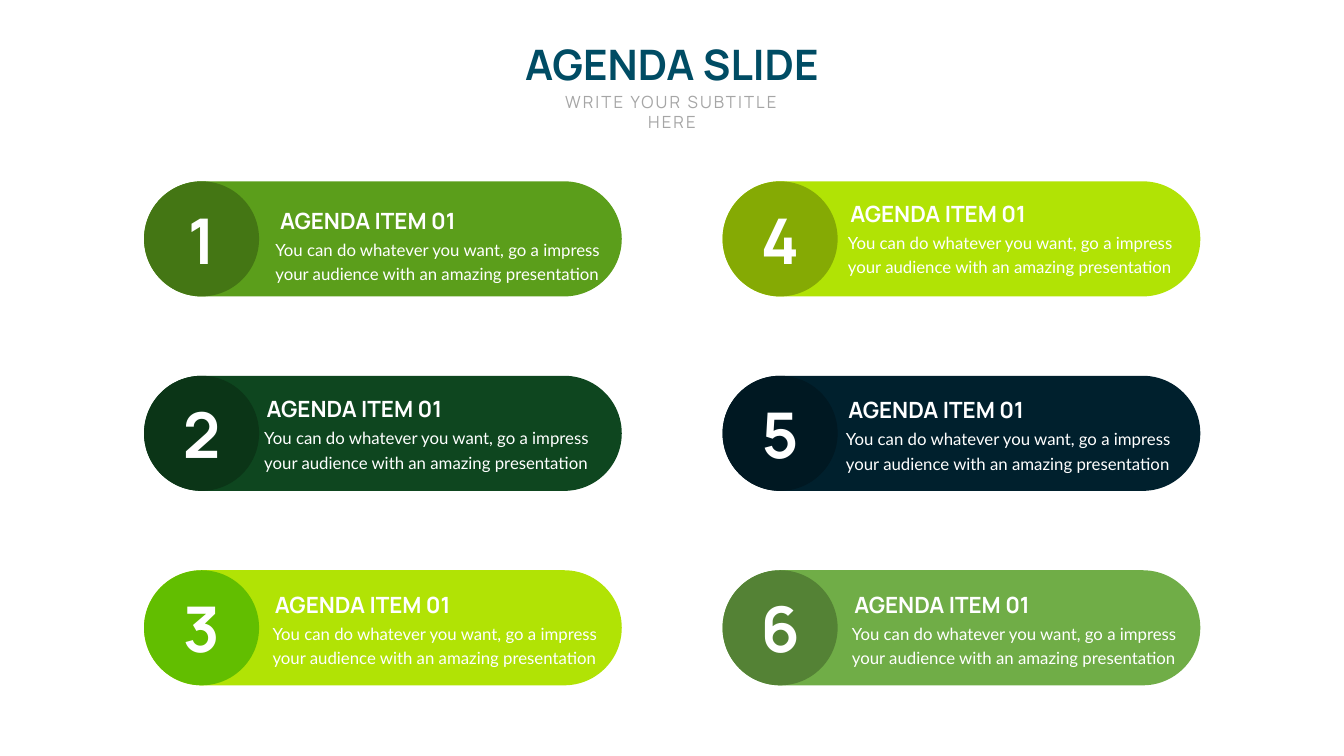
from pptx import Presentation
from pptx.dml.color import RGBColor
from pptx.enum.shapes import MSO_SHAPE
from pptx.enum.text import MSO_ANCHOR, MSO_AUTO_SIZE, PP_ALIGN
from pptx.util import Cm, Pt

PILL, CIRCLE = MSO_SHAPE.ROUNDED_RECTANGLE, MSO_SHAPE.OVAL
TOP, MIDDLE, BOTTOM = MSO_ANCHOR.TOP, MSO_ANCHOR.MIDDLE, MSO_ANCHOR.BOTTOM
LEFT, CENTER = PP_ALIGN.LEFT, PP_ALIGN.CENTER
NO_FIT = MSO_AUTO_SIZE.NONE

TITLE = "AGENDA SLIDE"
SUBTITLE = "WRITE YOUR SUBTITLE HERE"
HEADING = "AGENDA ITEM 01"
BODY = "You can do whatever you want, go a impress your audience with an amazing presentation"

COLORS = {
    "title": "004C64", "subtitle": "A6A6A6", "white": "FFFFFF",
    "leaf": "5B9E1B", "leaf_dark": "447614",
    "forest": "0E461F", "forest_dark": "0B3517",
    "lime": "B1E305", "lime_green": "62BE00", "lime_dark": "85AA04",
    "navy": "00202D", "navy_dark": "001822",
    "sage": "70AD47", "sage_dark": "548235",
}

# pill colour, circle colour, heading offset from the pill (x, y), body shift in x; cm
ITEMS = [
    ("leaf", "leaf_dark", 3.18, 0.51, 0),
    ("forest", "forest_dark", 2.84, 0.36, 0.06),
    ("lime", "lime_green", 3.05, 0.38, 0.06),
    ("lime", "lime_dark", 2.97, 0.33, 0.06),
    ("navy", "navy_dark", 2.92, 0.38, 0.06),
    ("sage", "sage_dark", 3.07, 0.38, 0.06),
]
ROWS = 3
GRID_X, GRID_Y, STEP_X, STEP_Y = 3.63, 4.57, 14.58, 4.9
PILL_W, PILL_H = 12.04, 2.9
NUMBER_W, NUMBER_H = 1.5, 2.18
HEADING_W, HEADING_H = 5.11, 0.94
BODY_W, BODY_H, BODY_DROP = 8.56, 1.35, 0.77

FORMATS = {
    "title": {"name": "Manrope", "size": Pt(30), "bold": True},
    "subtitle": {"name": "Manrope", "size": Pt(12), "bold": False},
    "number": {"name": "Manrope", "size": Pt(45), "bold": True},
    "heading": {"name": "Manrope", "size": Pt(16), "bold": True},
    "body": {"name": "Lato", "size": Pt(12), "bold": False},
}


def color(name):
    return RGBColor.from_string(COLORS[name])


def write(s, text, style, ink="white", align=LEFT, anchor=TOP, wrap=False):
    tf = s.text_frame
    frame = {"auto_size": NO_FIT, "word_wrap": wrap, "vertical_anchor": anchor}
    for key, value in frame.items():
        setattr(tf, key, value)
    p = tf.paragraphs[0]
    p.alignment = align
    p.space_before = Pt(0)
    r = p.add_run()
    r.text = text
    for key, value in FORMATS[style].items():
        setattr(r.font, key, value)
    r.font.color.rgb = color(ink)
    return s


def place(s, *box):
    for key, value in zip(("left", "top", "width", "height"), box):
        setattr(s, key, Cm(value))
    return s


def add_shape(kind, fill, *box):
    s = slide.shapes.add_shape(kind, *map(Cm, box))
    s.shadow.inherit = False
    s.fill.solid()
    s.fill.fore_color.rgb = color(fill)
    s.line.fill.background()
    return s


def add_box(*box):
    return slide.shapes.add_textbox(*map(Cm, box))


def add_item(index, pill, circle, dx, dy, shift):
    col, row = divmod(index, ROWS)
    x, y = GRID_X + col * STEP_X, GRID_Y + row * STEP_Y
    add_shape(PILL, pill, x, y, PILL_W, PILL_H).adjustments[0] = 0.5
    add_shape(CIRCLE, circle, x, y, PILL_H, PILL_H)

    number = add_box(x + (PILL_H - NUMBER_W) / 2, y + (PILL_H - NUMBER_H) / 2, NUMBER_W, NUMBER_H)
    write(number, str(index + 1), "number", align=CENTER, anchor=MIDDLE)

    heading = add_box(x + dx, y + dy, HEADING_W, HEADING_H)
    write(heading, HEADING, "heading", anchor=BOTTOM)

    body = add_box(x + dx + shift, y + dy + BODY_DROP, BODY_W, BODY_H)
    tf = write(body, BODY, "body", wrap=True).text_frame
    tf.margin_left = tf.margin_right = Cm(0.13)
    tf.margin_top = tf.margin_bottom = Cm(0.08)
    tf.paragraphs[0].line_spacing = Pt(17.5)


prs = Presentation()
prs.slide_width, prs.slide_height = Cm(33.87), Cm(19.05)
slide = prs.slides.add_slide(prs.slide_layouts[0])

title = place(slide.shapes.title, 12.87, 0.84, 8.13, 1.55)
write(title, TITLE, "title", "title", CENTER)
subtitle = place(slide.placeholders[1], 13.57, 2.18, 6.73, 0.76)
write(subtitle, SUBTITLE, "subtitle", "subtitle", CENTER, wrap=True)
subtitle.text_frame.paragraphs[0].runs[0].font._element.set("spc", "150")

for i, item in enumerate(ITEMS):
    add_item(i, *item)

prs.save("out.pptx")
